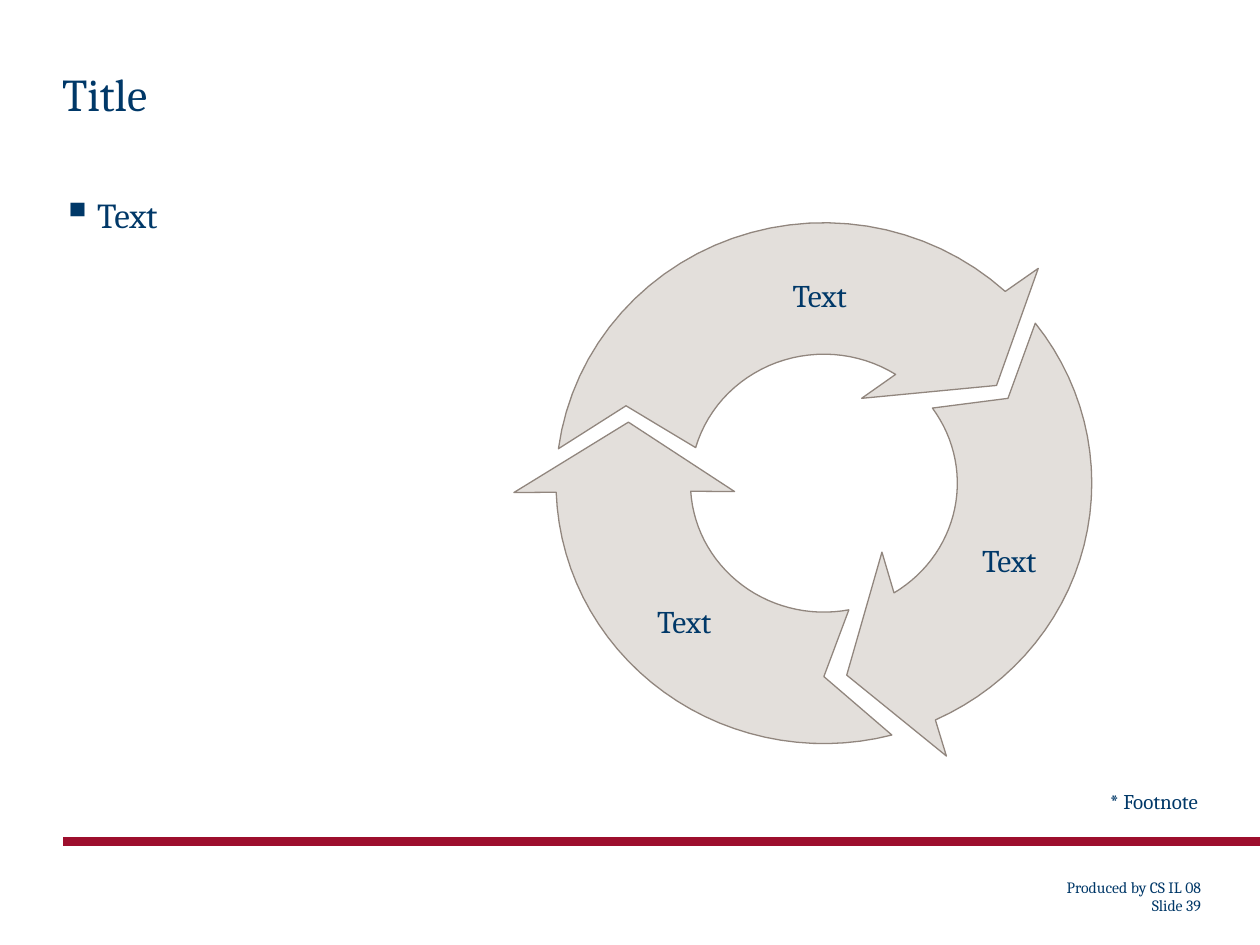
import math

import lxml.etree
import pptx
import pptx.dml.color
import pptx.enum.shapes
import pptx.enum.text
import pptx.oxml.ns
import pptx.util

Cm = pptx.util.Cm
Pt = pptx.util.Pt
ALIGN = pptx.enum.text.PP_ALIGN
ANCHOR = pptx.enum.text.MSO_ANCHOR
qn = pptx.oxml.ns.qn

NAVY = pptx.dml.color.RGBColor(0x00, 0x38, 0x68)
RED = pptx.dml.color.RGBColor(0x9D, 0x0E, 0x2D)
SAND = pptx.dml.color.RGBColor(0xE3, 0xDF, 0xDB)
TAUPE = pptx.dml.color.RGBColor(0x91, 0x86, 0x7E)
FONT = "Cambria"

# Ring of arrows, in centimetres
CENTRE = (16.61, 9.74)
OUTER = (5.4, 5.25)
INNER = (2.69, 2.6)
# Outer arc angles, arrowhead corners, inner arc angles, notch of the tail
ARROWS = [
    ((187.6, 312.6), [(20.93, 5.41), (20.09, 7.77), (17.37, 8.03)],
     (302.5, 196), (12.62, 8.18)),
    ((75.3, 178), [(10.36, 9.93), (12.67, 8.51), (14.81, 9.91)],
     (176.4, 79.2), (16.61, 13.64)),
    ((-37.9, 65.4), [(19.08, 15.24), (17.07, 13.61), (17.78, 11.13)],
     (58.3, -35.6), (20.32, 8.03)),
]
# Left, top and width of each arrow's label
ARROW_LABELS = [(13.64, 5.38, 5.77), (12.4, 11.96, 2.79), (18.95, 10.72, 2.79)]


def write_text(frame, text, size, align=ALIGN.LEFT, spacing=None,
               anchor=ANCHOR.TOP, insets=(0, 0, 0, 0), wrap=True):
    """Fill a text frame and format all of its runs alike."""
    frame.auto_size = pptx.enum.text.MSO_AUTO_SIZE.NONE
    frame.word_wrap = wrap
    frame.vertical_anchor = anchor
    (frame.margin_left, frame.margin_top,
     frame.margin_right, frame.margin_bottom) = map(Cm, insets)
    frame.text = text
    for paragraph in frame.paragraphs:
        paragraph.alignment = align
        paragraph.line_spacing = spacing
        for run in paragraph.runs:
            run.font.name = FONT
            run.font.size = Pt(size)
            run.font.color.rgb = NAVY


def add_text(slide, box, text, size, **style):
    frame = slide.shapes.add_textbox(*map(Cm, box)).text_frame
    write_text(frame, text, size, **style)
    return frame


def add_bullet(paragraph):
    """Give a paragraph a square bullet with a hanging indent."""
    properties = paragraph._p.get_or_add_pPr()
    properties.set("marL", str(Cm(0.71)))
    properties.set("indent", str(-Cm(0.71)))
    colour = lxml.etree.SubElement(properties, qn("a:buClr"))
    lxml.etree.SubElement(colour, qn("a:srgbClr"), val=str(NAVY))
    lxml.etree.SubElement(properties, qn("a:buSzPct"), val="120000")
    lxml.etree.SubElement(properties, qn("a:buChar"), char="▪")


def add_title(slide):
    title = slide.shapes.title
    title.left, title.top, title.width, title.height = map(
        Cm, (1.25, 1.47, 22.89, 0.86))
    write_text(title.text_frame, "Title", 26, spacing=Pt(27))


def add_rule(slide):
    rule = slide.shapes.add_connector(
        pptx.enum.shapes.MSO_CONNECTOR.STRAIGHT,
        Cm(1.27), Cm(16.96), Cm(25.4), Cm(16.96))
    rule.line.color.rgb = RED
    rule.line.width = Pt(5)
    lxml.etree.SubElement(rule._element.spPr, qn("a:effectLst"))


def arc_points(radii, angles, steps=30):
    """Points along the ring's ellipse, clockwise from the right."""
    start, end = angles
    turns = [math.radians(start + (end - start) * step / steps)
             for step in range(steps + 1)]
    return [(CENTRE[0] + radii[0] * math.cos(turn),
             CENTRE[1] + radii[1] * math.sin(turn)) for turn in turns]


def add_ring_arrow(slide, outer_angles, head, inner_angles, notch):
    outline = (arc_points(OUTER, outer_angles) + head
               + arc_points(INNER, inner_angles) + [notch])
    corners = [(Cm(x), Cm(y)) for x, y in outline]
    builder = slide.shapes.build_freeform(*corners[0])
    builder.add_line_segments(corners[1:], close=True)
    arrow = builder.convert_to_shape()
    arrow.shadow.inherit = False
    arrow.fill.solid()
    arrow.fill.fore_color.rgb = SAND
    arrow.line.color.rgb = TAUPE
    arrow.line.width = Pt(0.75)


def main():
    presentation = pptx.Presentation()
    presentation.slide_width = Cm(25.4)
    presentation.slide_height = Cm(19.05)
    slide = presentation.slides.add_slide(presentation.slide_layouts[5])

    # Footer
    add_rule(slide)
    add_text(slide, (19.33, 17.58, 4.88, 0.99),
             "Produced by CS IL 08\nSlide 39", 9, align=ALIGN.RIGHT,
             spacing=0.94, anchor=ANCHOR.BOTTOM, insets=(0, 0.13, 0, 0.13))

    # Title, body and footnote
    add_title(slide)
    body = add_text(slide, (1.25, 3.81, 8.71, 11.94), "Text", 20, spacing=1.1)
    add_bullet(body.paragraphs[0])
    add_text(slide, (22.02, 15.77, 2.13, 0.64), "* Footnote", 12,
             align=ALIGN.RIGHT, insets=(0.25, 0.13, 0, 0), wrap=False)

    # Cycle of three arrows with their labels on top
    for arrow in ARROWS:
        add_ring_arrow(slide, *arrow)
    for left, top, width in ARROW_LABELS:
        add_text(slide, (left, top, width, 1.12), "Text", 18,
                 align=ALIGN.CENTER, anchor=ANCHOR.MIDDLE, insets=(0.18,) * 4)

    presentation.save("out.pptx")


if __name__ == "__main__":
    main()
